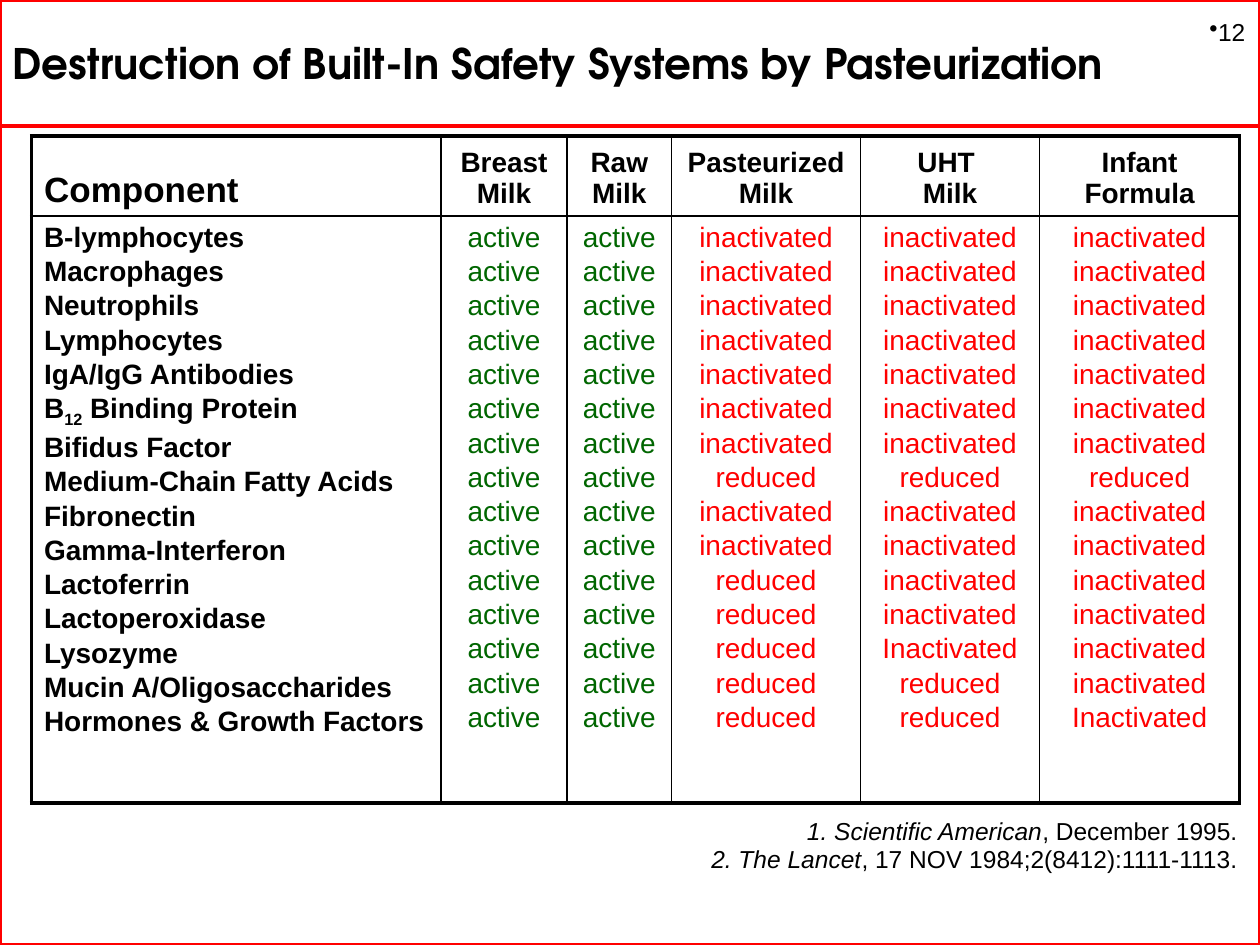
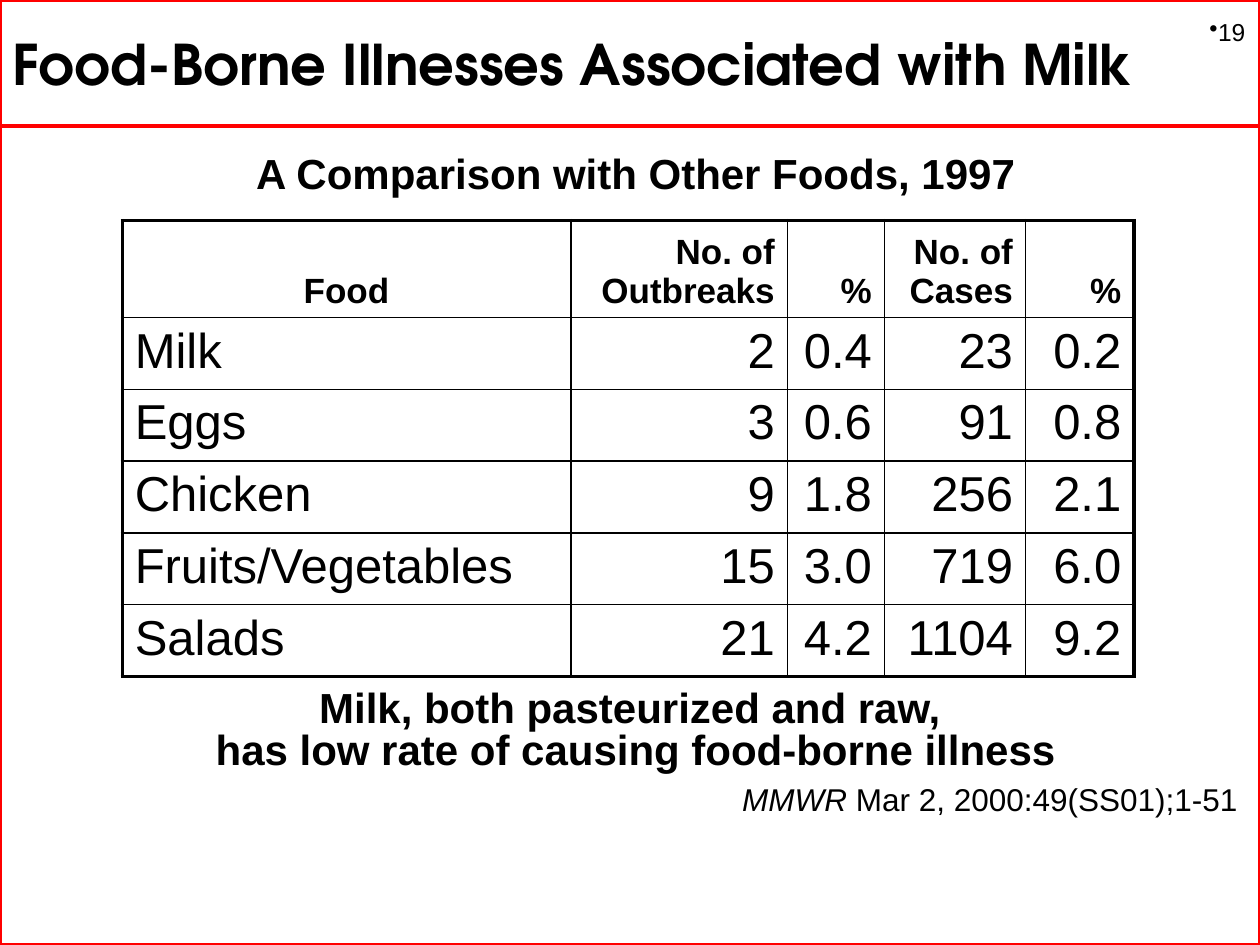
from lxml import etree
from pptx import Presentation
from pptx.dml.color import RGBColor
from pptx.enum.shapes import MSO_SHAPE
from pptx.enum.text import MSO_ANCHOR, MSO_AUTO_SIZE, PP_ALIGN
from pptx.oxml.ns import qn
from pptx.util import Inches, Pt

LEFT, CENTER, RIGHT = PP_ALIGN.LEFT, PP_ALIGN.CENTER, PP_ALIGN.RIGHT
TOP, MIDDLE, BOTTOM = MSO_ANCHOR.TOP, MSO_ANCHOR.MIDDLE, MSO_ANCHOR.BOTTOM
RECTANGLE = MSO_SHAPE.RECTANGLE
NO_AUTOFIT = MSO_AUTO_SIZE.NONE

BODY_FONT, TITLE_FONT = "Arial", "TeX Gyre Adventor"
BLACK, RED, GREEN = "000000", "FF0000", "006600"
SLIDE_W, SLIDE_H, TITLE_H = 10, 7.5, 1
BODY_LEFT, BODY_W = 0.17, 9.75
THICK, THIN = 2.25, 1
TITLE_ONLY = 5

COMPONENTS = [
    "B-lymphocytes", "Macrophages", "Neutrophils", "Lymphocytes",
    "IgA/IgG Antibodies", "B12 Binding Protein", "Bifidus Factor",
    "Medium-Chain Fatty Acids", "Fibronectin", "Gamma-Interferon",
    "Lactoferrin", "Lactoperoxidase", "Lysozyme",
    "Mucin A/Oligosaccharides", "Hormones & Growth Factors",
]
VITAMIN_ROW = COMPONENTS.index("B12 Binding Protein")
ACTIVE = ["active"] * len(COMPONENTS)
GONE, LESS = ["inactivated"], ["reduced"]
CELLS_AND_ACIDS = GONE * 7 + LESS
MILKS = [
    ("Breast Milk", ACTIVE, GREEN),
    ("Raw Milk", ACTIVE, GREEN),
    ("Pasteurized Milk", CELLS_AND_ACIDS + GONE * 2 + LESS * 5, RED),
    ("UHT \vMilk", CELLS_AND_ACIDS + GONE * 4 + ["Inactivated"] + LESS * 2, RED),
    ("Infant Formula", CELLS_AND_ACIDS + GONE * 6 + ["Inactivated"], RED),
]
FOODS = [
    ("Food", "No. of Outbreaks", "%", "No. of Cases", "%"),
    ("Milk", "2", "0.4", "23", "0.2"),
    ("Eggs", "3", "0.6", "91", "0.8"),
    ("Chicken", "9", "1.8", "256", "2.1"),
    ("Fruits/Vegetables", "15", "3.0", "719", "6.0"),
    ("Salads", "21", "4.2", "1104", "9.2"),
]


def rgb(colour):
    return RGBColor.from_string(colour)


def style_font(font, size, bold=False, colour=BLACK, name=BODY_FONT):
    font.name, font.size, font.bold = name, Pt(size), bold
    font.color.rgb = rgb(colour)


def fill_text(frame, lines, size, align=LEFT, bold=False, colour=BLACK,
              spacing=1.0, gap=0):
    """Write one paragraph per line; a line is a string or (italic, plain)."""
    for number, line in enumerate(lines):
        paragraph = frame.paragraphs[0] if number == 0 else frame.add_paragraph()
        paragraph.alignment = align
        paragraph.line_spacing = spacing
        paragraph.space_before = Pt(gap if number else 0)
        if isinstance(line, str):
            paragraph.text = line
        else:
            for part in line:
                paragraph.add_run().text = part
            paragraph.runs[0].font.italic = True
        for run in paragraph.runs:
            style_font(run.font, size, bold, colour)


def add_text(slide, box, lines, size, **style):
    area = slide.shapes.add_textbox(*map(Inches, box))
    area.text_frame.word_wrap = True
    fill_text(area.text_frame, lines, size, **style)
    return area


def add_frame(slide):
    frame = slide.shapes.add_shape(RECTANGLE, 0, 0, Inches(SLIDE_W), Inches(SLIDE_H))
    frame.shadow.inherit = False
    frame.fill.background()
    frame.line.color.rgb = rgb(RED)
    frame.line.width = Pt(THICK)


def add_title(slide, text, size):
    title = slide.shapes.title
    title.left, title.top = 0, 0
    title.width, title.height = Inches(SLIDE_W), Inches(TITLE_H)
    title.line.color.rgb = rgb(RED)
    title.line.width = Pt(THICK)
    frame = title.text_frame
    frame.text = text
    frame.auto_size = NO_AUTOFIT
    frame.vertical_anchor = MIDDLE
    frame.paragraphs[0].alignment = LEFT
    style_font(frame.paragraphs[0].runs[0].font, size, True, name=TITLE_FONT)


def add_page_number(slide, number):
    page = add_text(slide, (SLIDE_W - 0.5, 0, 0.5, 0.5), [str(number)], 14)
    page.text_frame.vertical_anchor = MIDDLE
    properties = page.text_frame.paragraphs[0]._p.get_or_add_pPr()
    etree.SubElement(properties, qn("a:buChar")).set("char", "•")


def add_base_slide(deck, title, title_size, number):
    slide = deck.slides.add_slide(deck.slide_layouts[TITLE_ONLY])
    add_frame(slide)
    add_title(slide, title, title_size)
    add_page_number(slide, number)
    return slide


def set_borders(cell, widths):
    """Draw the left, right, top and bottom borders in the given widths."""
    properties = cell._tc.get_or_add_tcPr()
    for side, width in zip("LRTB", widths):
        line = etree.SubElement(properties, qn("a:ln" + side))
        line.set("w", str(Pt(width)))
        fill = etree.SubElement(line, qn("a:solidFill"))
        etree.SubElement(fill, qn("a:srgbClr")).set("val", BLACK)


def add_grid(slide, left, top, col_widths, row_heights):
    """Add an unfilled table with a thick outline and thin inner rules."""
    rows, cols = len(row_heights), len(col_widths)
    grid = slide.shapes.add_table(
        rows, cols, Inches(left), Inches(top),
        Inches(sum(col_widths)), Inches(sum(row_heights))).table
    grid.first_row = grid.horz_banding = False
    for column, width in zip(grid.columns, col_widths):
        column.width = Inches(width)
    for row, height in zip(grid.rows, row_heights):
        row.height = Inches(height)
    for r in range(rows):
        for c in range(cols):
            cell = grid.cell(r, c)
            edges = (c == 0, c == cols - 1, r == 0, r == rows - 1)
            set_borders(cell, [THICK if edge else THIN for edge in edges])
            cell.fill.background()
            cell.vertical_anchor = TOP if r else BOTTOM
    return grid


def lower_vitamin_number(paragraph):
    paragraph.text = ""
    for part in ("B", "12", " Binding Protein"):
        run = paragraph.add_run()
        run.text = part
        style_font(run.font, 16, True)
    paragraph.runs[1]._r.get_or_add_rPr().set("baseline", "-25000")


def add_component_table(slide, left, top):
    grid = add_grid(slide, left, top, [3.25, 1, 0.83, 1.5, 1.42, 1.59], [0.63, 4.66])
    fill_text(grid.cell(0, 0).text_frame, ["Component"], 20, bold=True)
    names = grid.cell(1, 0).text_frame
    fill_text(names, COMPONENTS, 16, bold=True, gap=1.8)
    lower_vitamin_number(names.paragraphs[VITAMIN_ROW])
    for c, (milk, states, colour) in enumerate(MILKS, 1):
        fill_text(grid.cell(0, c).text_frame, [milk], 16, CENTER, True)
        fill_text(grid.cell(1, c).text_frame, states, 16, CENTER,
                  colour=colour, gap=1.8)


def add_food_table(slide, left, top):
    grid = add_grid(slide, left, top, [3.56, 1.72, 0.77, 1.12, 0.86],
                    [0.77] + [0.57] * (len(FOODS) - 1))
    for r, values in enumerate(FOODS):
        header = r == 0
        for c, value in enumerate(values):
            align = RIGHT if c else CENTER if header else LEFT
            fill_text(grid.cell(r, c).text_frame, [value], 20 if header else 28,
                      align, bold=header)


def build_pasteurization_slide(deck):
    slide = add_base_slide(
        deck, "Destruction of Built-In Safety Systems by Pasteurization", 24, 12)
    add_component_table(slide, 0.25, 1.08)
    references = [("1. Scientific American", ", December 1995."),
                  ("2. The Lancet", ", 17 NOV 1984;2(8412):1111-1113.")]
    add_text(slide, (BODY_LEFT, 6.45, BODY_W, 0.55), references, 14,
             align=RIGHT, spacing=0.9, gap=0.9)


def build_illness_slide(deck):
    slide = add_base_slide(deck, "Food-Borne Illnesses Associated with Milk", 32, 19)
    add_text(slide, (BODY_LEFT, 1.12, BODY_W, 0.5),
             ["A Comparison with Other Foods, 1997"], 24, align=CENTER, bold=True)
    add_food_table(slide, 0.97, 1.75)
    add_text(slide, (BODY_LEFT, 5.43, BODY_W, 0.72),
             ["Milk, both pasteurized and raw, ",
              "has low rate of causing food-borne illness"],
             24, align=CENTER, bold=True, spacing=0.83)
    add_text(slide, (BODY_LEFT, 6.14, BODY_W, 0.4),
             [("MMWR", " Mar 2, 2000:49(SS01);1-51")], 18, align=RIGHT)


def main():
    deck = Presentation()
    deck.slide_width, deck.slide_height = Inches(SLIDE_W), Inches(SLIDE_H)
    build_pasteurization_slide(deck)
    build_illness_slide(deck)
    deck.save("out.pptx")


if __name__ == "__main__":
    main()
